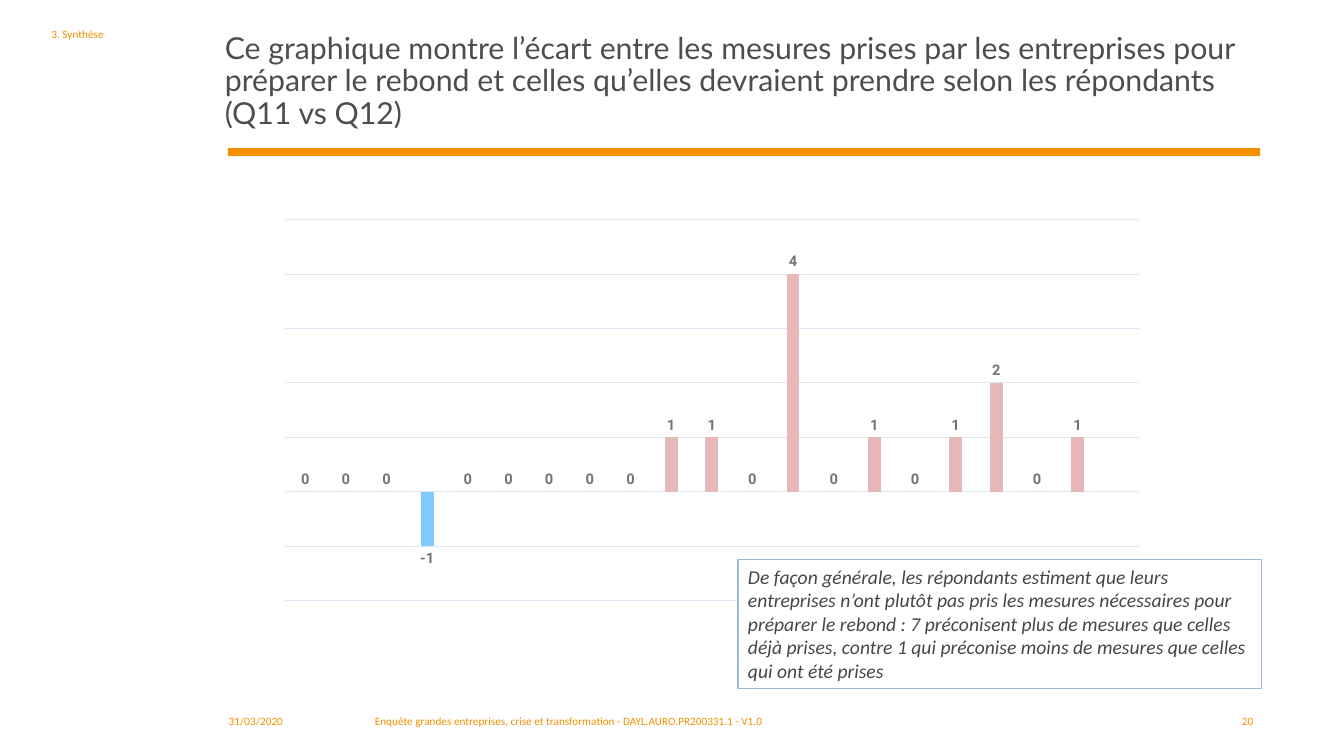
import pptx
import pptx.chart.data
import pptx.dml.color
import pptx.enum.chart
import pptx.enum.text
import pptx.util
from pptx.util import Inches

ORANGE = "F39000"
DARK = "454748"
PINK = "E6B9B8"
BLUE = "80CAFF"
GAPS = [0, 0, 0, -1, 0, 0, 0, 0, 0, 1, 1, 0, 4, 0, 1, 0, 1, 2, 0, 1, None]
LEFT = pptx.enum.text.PP_ALIGN.LEFT
TOP = pptx.enum.text.MSO_ANCHOR.TOP


def color(value):
    return pptx.dml.color.RGBColor.from_string(value)


def place(shape, box):
    shape.left, shape.top, shape.width, shape.height = map(Inches, box)


def write(shape, text, size=8, font="Calibri", fill=ORANGE, italic=False,
          align=LEFT, anchor=TOP, spacing=1.0, bullet=True):
    frame = shape.text_frame
    frame.word_wrap = True
    frame.auto_size = pptx.enum.text.MSO_AUTO_SIZE.NONE
    frame.vertical_anchor = anchor
    paragraph = frame.paragraphs[0]
    paragraph.alignment = align
    paragraph.line_spacing = spacing
    paragraph.space_before = pptx.util.Pt(0)
    if not bullet:
        properties = paragraph._p.get_or_add_pPr()
        properties.set("marL", "0")
        properties.set("indent", "0")
        properties.append(pptx.oxml.parse_xml(
            '<a:buNone xmlns:a="http://schemas.openxmlformats.org/drawingml/2006/main"/>'))
    run = paragraph.add_run()
    run.text = text
    run.font.size = pptx.util.Pt(size)
    run.font.name = font
    run.font.italic = italic
    run.font.color.rgb = color(fill)


def add_rectangle(slide, box, fill, line=None):
    shape = slide.shapes.add_shape(
        pptx.enum.shapes.MSO_SHAPE.RECTANGLE, *map(Inches, box))
    shape.shadow.inherit = False
    shape.fill.solid()
    shape.fill.fore_color.rgb = color(fill)
    if line:
        shape.line.color.rgb = color(line)
        shape.line.width = pptx.util.Pt(1)
    else:
        shape.line.fill.background()
    return shape


def add_header(slide, box):
    left, top, width, height = box
    title = slide.shapes.title
    place(title, (left + 1.72, top, width - 1.72, height))
    write(title, "Ce graphique montre l’écart entre les mesures prises par les "
          "entreprises pour préparer le rebond et celles qu’elles devraient "
          "prendre selon les répondants (Q11 vs Q12)",
          size=21.6, font="Lato", fill="4D4D4D", spacing=0.9,
          anchor=pptx.enum.text.MSO_ANCHOR.BOTTOM)
    section = slide.placeholders[1]
    place(section, (left, top, 1.69, 1.37))
    write(section, "3. Synthèse", bullet=False)
    add_rectangle(slide, (left + 1.85, top + 1.25, width - 1.85, 0.08), ORANGE)


def add_gap_chart(slide, box):
    data = pptx.chart.data.CategoryChartData()
    data.categories = [str(number + 1) for number in range(len(GAPS))]
    data.add_series("Series 1", GAPS)
    chart = slide.shapes.add_chart(
        pptx.enum.chart.XL_CHART_TYPE.COLUMN_CLUSTERED,
        *map(Inches, box), data).chart
    chart.has_legend = False
    chart.has_title = False
    chart.font.name = "Roboto"
    chart.font.size = pptx.util.Pt(10)
    chart.font.color.rgb = color(DARK)
    chart.category_axis.visible = False

    axis = chart.value_axis
    axis.visible = False
    axis.minimum_scale, axis.maximum_scale, axis.major_unit = -2, 5, 1
    axis.has_major_gridlines = True
    grid = axis.major_gridlines.format.line
    grid.color.rgb = color("DCE7F5")
    grid.width = pptx.util.Pt(0.75)

    plot = chart.plots[0]
    plot.vary_by_categories = False
    plot.gap_width = 219
    plot.overlap = -27
    series = plot.series[0]
    series.invert_if_negative = False
    series.format.fill.solid()
    series.format.fill.fore_color.rgb = color(PINK)
    for index, gap in enumerate(GAPS):
        if gap is not None and gap < 0:
            fill = series.points[index].format.fill
            fill.solid()
            fill.fore_color.rgb = color(BLUE)

    labels = series.data_labels
    labels.show_value = True
    labels.position = pptx.enum.chart.XL_LABEL_POSITION.OUTSIDE_END
    labels.font.name = "Roboto"
    labels.font.size = pptx.util.Pt(10.5)
    labels.font.bold = True
    labels.font.color.rgb = color("727577")


def add_comment(slide, box):
    comment = add_rectangle(slide, box, "FFFFFF", line="9BB5DF")
    write(comment, "De façon générale, les répondants estiment que leurs "
          "entreprises n’ont plutôt pas pris les mesures nécessaires pour "
          "préparer le rebond : 7 préconisent plus de mesures que celles déjà "
          "prises, contre 1 qui préconise moins de mesures que celles qui ont "
          "été prises", size=14, fill=DARK, italic=True)


def add_footer(slide, box):
    left, top, width, height = box
    entries = [
        (0, 1.42, "31/03/2020", LEFT),
        (1.45, 5.47, "Enquête grandes entreprises, crise et transformation - "
         "DAYL.AURO.PR200331.1 - V1.0", LEFT),
        (width - 1.22, 1.22, "20", pptx.enum.text.PP_ALIGN.RIGHT),
    ]
    for offset, entry_width, text, align in entries:
        entry = slide.shapes.add_textbox(
            *map(Inches, (left + offset, top, entry_width, height)))
        write(entry, text, align=align)


def main():
    presentation = pptx.Presentation()
    presentation.slide_width = Inches(13.33)
    presentation.slide_height = Inches(7.5)
    slide = presentation.slides.add_slide(presentation.slide_layouts[1])
    add_header(slide, (0.41, 0.22, 12.09, 1.13))
    add_gap_chart(slide, (2.65, 2.1, 8.82, 3.94))
    add_comment(slide, (7.32, 5.55, 5.19, 1.28))
    add_footer(slide, (2.17, 7.04, 10.36, 0.36))
    presentation.save("out.pptx")


if __name__ == "__main__":
    main()
